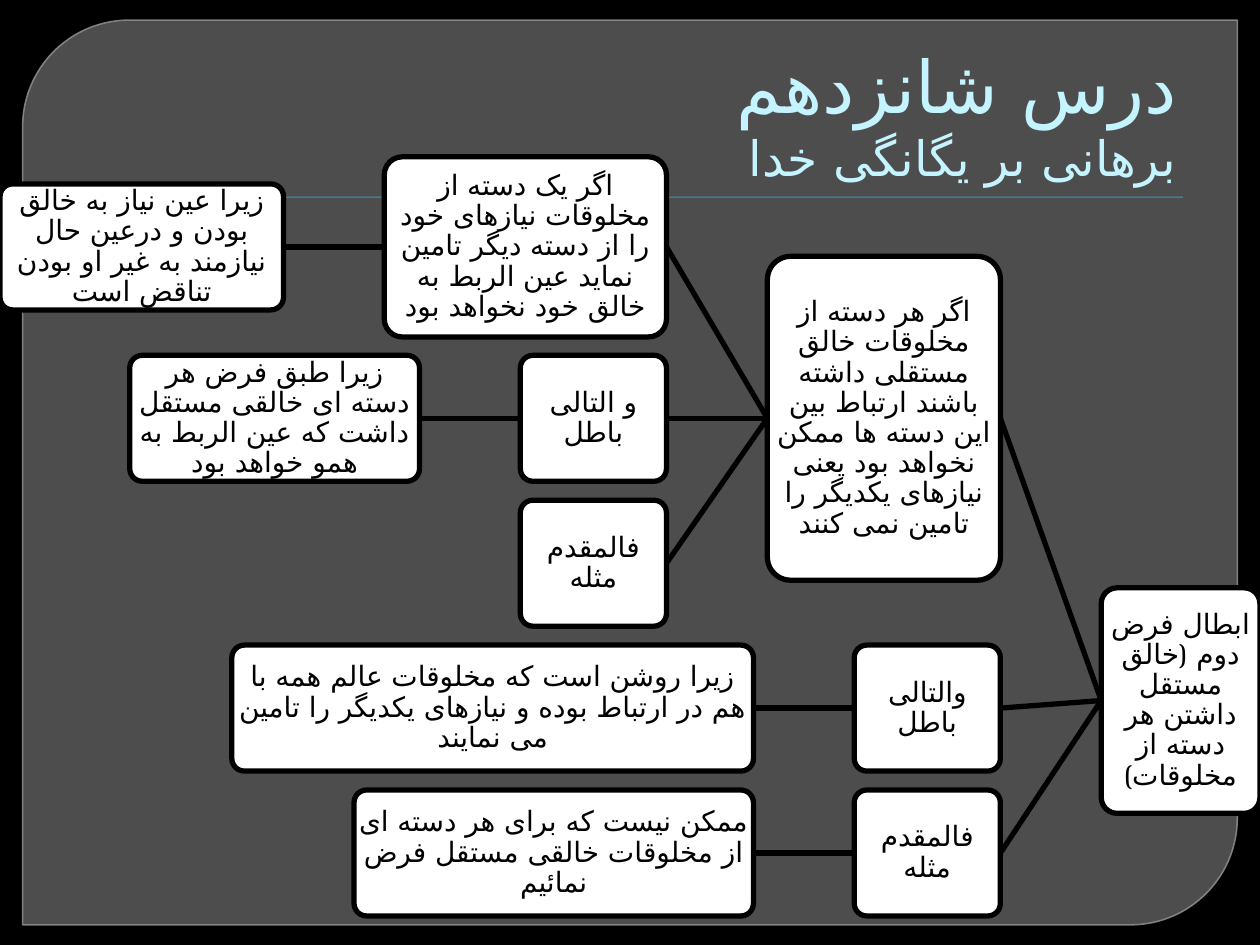
from lxml import etree
from pptx import Presentation
from pptx.dml.color import RGBColor
from pptx.enum import lang, shapes as kinds, text as layout
from pptx.oxml.ns import qn
from pptx.util import Inches, Pt

FONT = "TeX Gyre Bonum"
COLORS = {"black": "000000", "white": "FFFFFF", "panel": "777777",
          "edge": "8E8E8E", "rule": "2DA2BF", "title": "C4F4FF"}

TITLE = [("درس شانزدهم", 41.4), ("برهانی بر یگانگی خدا", 27.9)]

# name: (parent, width, height, vertical centre, wording); the tree grows leftwards
ARGUMENT = {
    "claim": (None, 1.26, 1.79, 5.56,
              "ابطال فرض دوم (خالق مستقل داشتن هر دسته از مخلوقات)"),
    "premise": ("claim", 1.85, 2.57, 3.32,
                "اگر هر دسته از مخلوقات خالق مستقلی داشته باشند ارتباط بین این دسته ها "
                "ممکن نخواهد بود یعنی نیازهای یکدیگر را تامین نمی کنند"),
    "need": ("premise", 2.24, 1.43, 1.96,
             "اگر یک دسته از مخلوقات نیازهای خود را از دسته دیگر تامین نماید "
             "عین الربط به خالق خود نخواهد بود"),
    "need reason": ("need", 2.25, 1, 1.96,
                    "زیرا عین نیاز به خالق بودن و درعین حال نیازمند به غیر او بودن تناقض است"),
    "inner false": ("premise", 1.16, 1, 3.32, "و التالی باطل"),
    "inner reason": ("inner false", 2.3, 1, 3.32,
                     "زیرا طبق فرض هر دسته ای خالقی مستقل داشت که عین الربط به همو خواهد بود"),
    "inner result": ("premise", 1.16, 1, 4.47, "فالمقدم مثله"),
    "outer false": ("claim", 1.16, 1, 5.62, "والتالی باطل"),
    "outer reason": ("outer false", 4.14, 1, 5.62,
                     "زیرا روشن است که مخلوقات عالم همه با هم در ارتباط بوده و "
                     "نیازهای یکدیگر را تامین می نمایند"),
    "outer result": ("claim", 1.16, 1, 6.77, "فالمقدم مثله"),
    "conclusion": ("outer result", 3.17, 1, 6.77,
                   "ممکن نیست که برای هر دسته ای از مخلوقات خالقی مستقل فرض نمائیم"),
}
RIGHT_EDGE, GAP = 10, 0.8
LEFT_SIDE, RIGHT_SIDE = 1, 3


def color(name):
    return RGBColor.from_string(COLORS[name])


def add_box(slide, kind, at, fill, line=None, width=0):
    box = slide.shapes.add_shape(kind, *map(Inches, at))
    box.shadow.inherit = False
    box.fill.solid()
    box.fill.fore_color.rgb = color(fill)
    if line:
        box.line.color.rgb = color(line)
        box.line.width = Pt(width)
    else:
        box.line.fill.background()
    return box


def set_alpha(fill, percent):
    choice = fill._xPr.find(qn("a:solidFill"))[0]
    etree.SubElement(choice, qn("a:alpha")).set("val", str(percent * 1000))


def style_paragraph(paragraph, align, ink):
    paragraph.alignment = align
    paragraph.font.name = FONT
    paragraph.font.color.rgb = color(ink)
    etree.SubElement(paragraph.font._element, qn("a:cs")).set("typeface", FONT)
    paragraph._p.get_or_add_pPr().set("rtl", "1")


def add_persian(paragraph, wording, size):
    run = paragraph.add_run()
    run.text = wording
    run.font.size = Pt(size)
    run.font.language_id = lang.MSO_LANGUAGE_ID.FARSI


def add_backdrop(slide):
    slide.background.fill.solid()
    slide.background.fill.fore_color.rgb = color("black")
    panel = add_box(slide, kinds.MSO_SHAPE.ROUND_2_DIAG_RECTANGLE,
                    (0.18, 0.16, 9.64, 7.18), "panel", "edge", 0.87)
    panel.adjustments[0] = 0.118
    set_alpha(panel.fill, 65)
    set_alpha(panel.line.fill, 88)
    add_box(slide, kinds.MSO_SHAPE.RECTANGLE, (0.64, 1.56, 8.75, 0.01), "rule")


def add_title(slide):
    frame = slide.shapes.add_textbox(*map(Inches, (0.5, 0.28, 9, 1.25))).text_frame
    frame.word_wrap = True
    frame.vertical_anchor = layout.MSO_ANCHOR.BOTTOM
    heading = frame.paragraphs[0]
    style_paragraph(heading, layout.PP_ALIGN.RIGHT, "title")
    heading._p.pPr.set("marL", str(Inches(0.06)))
    for i, (wording, size) in enumerate(TITLE):
        if i:
            heading.add_line_break()
        add_persian(heading, wording, size)


def add_step(slide, at, wording):
    step = add_box(slide, kinds.MSO_SHAPE.ROUNDED_RECTANGLE, at, "white", "black", 3)
    step.adjustments[0] = 0.1
    frame = step.text_frame
    frame.word_wrap = True
    frame.vertical_anchor = layout.MSO_ANCHOR.MIDDLE
    frame.margin_left = frame.margin_right = Inches(0.01)
    frame.margin_top = frame.margin_bottom = Inches(0.01)
    paragraph = frame.paragraphs[0]
    style_paragraph(paragraph, layout.PP_ALIGN.CENTER, "black")
    paragraph.line_spacing = 0.9
    add_persian(paragraph, wording, 16)
    return step


def link(slide, parent, child):
    branch = slide.shapes.add_connector(kinds.MSO_CONNECTOR.STRAIGHT, 0, 0, 0, 0)
    branch.begin_connect(parent, LEFT_SIDE)
    branch.end_connect(child, RIGHT_SIDE)
    branch.line.color.rgb = color("black")
    branch.line.width = Pt(3)
    etree.SubElement(branch._element.spPr, qn("a:effectLst"))


def add_argument(slide):
    steps, lefts = {}, {}
    for name, (parent, width, height, middle, wording) in ARGUMENT.items():
        right = lefts[parent] - GAP if parent else RIGHT_EDGE
        lefts[name] = right - width
        steps[name] = add_step(
            slide, (lefts[name], middle - height / 2, width, height), wording)
        if parent:
            link(slide, steps[parent], steps[name])


def main():
    deck = Presentation()
    deck.slide_width, deck.slide_height = Inches(10), Inches(7.5)
    slide = deck.slides.add_slide(deck.slide_layouts[6])
    add_backdrop(slide)
    add_title(slide)
    add_argument(slide)
    deck.save("out.pptx")


if __name__ == "__main__":
    main()
